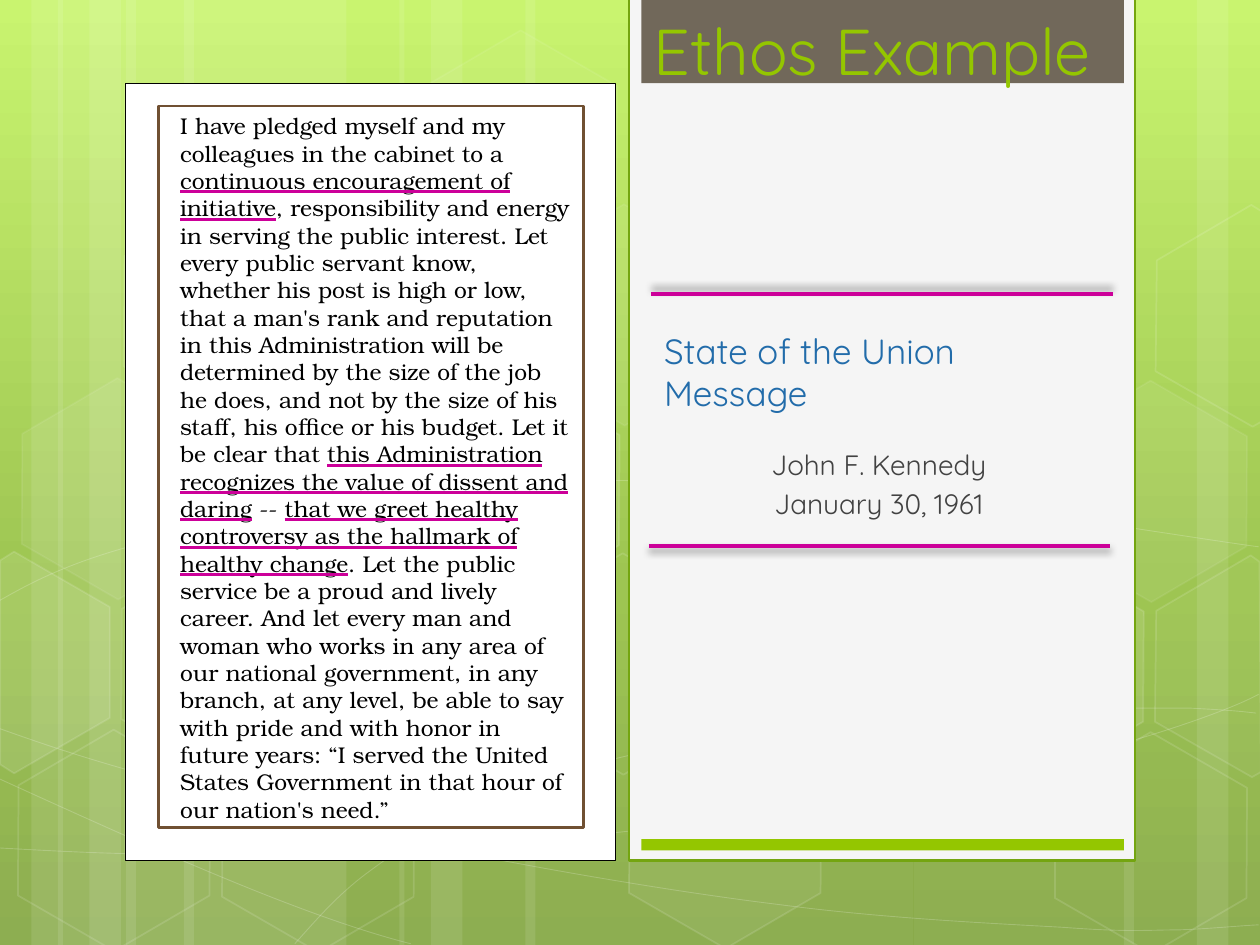
"""Build the Ethos Example slide: a quoted speech beside a caption panel."""
from copy import deepcopy
from math import cos, radians, sin

from lxml.etree import SubElement
from pptx import Presentation
from pptx.dml.color import RGBColor
from pptx.enum.shapes import MSO_CONNECTOR as CXN, MSO_SHAPE as SHAPE
from pptx.enum.text import (MSO_ANCHOR as ANCHOR, MSO_AUTO_SIZE as AUTO,
                            MSO_UNDERLINE as UNDERLINE, PP_ALIGN as ALIGN)
from pptx.oxml.ns import qn
from pptx.util import Inches, Pt

WHITE = RGBColor(0xFF, 0xFF, 0xFF)
BLACK = RGBColor(0, 0, 0)
PANEL = RGBColor(0xF5, 0xF5, 0xF5)
TAUPE = RGBColor(0x71, 0x68, 0x5A)
LIME = RGBColor(0x94, 0xC6, 0x00)
MOSS = RGBColor(0x74, 0xA5, 0x10)
BROWN = RGBColor(0x70, 0x50, 0x32)
BLUE = RGBColor(0x22, 0x6C, 0xAA)
GREY = RGBColor(0x42, 0x42, 0x42)
MAGENTA = RGBColor(0xCC, 0x00, 0x99)
SKY = [(0, RGBColor(0xC3, 0xF3, 0x5F)), (0.62, RGBColor(0x93, 0xBF, 0x3F)),
       (1, RGBColor(0x81, 0xA5, 0x3E))]
SERIF, SANS = "TeX Gyre Bonum", "Quicksand"
TILT = 30

prs = Presentation()
prs.slide_width, prs.slide_height = Inches(10), Inches(7.5)
COL, ROW = prs.slide_width / 10, prs.slide_height / 7.5
s = prs.slides.add_slide(prs.slide_layouts[7])


def grid(*values):
    return [round(v * (ROW if i % 2 else COL)) for i, v in enumerate(values)]


def paint(sp, fill=None, line=None, width=1, fill_alpha=100, line_alpha=100):
    sp.shadow.inherit = False
    for part, color, alpha in ((sp.fill, fill, fill_alpha), (sp.line.fill, line, line_alpha)):
        if color is None:
            part.background()
            continue
        part.solid()
        part.fore_color.rgb = color
        if alpha < 100:
            holder = sp._element.spPr if part is sp.fill else sp.line._ln
            clr = holder.find(qn("a:solidFill")).find(qn("a:srgbClr"))
            SubElement(clr, qn("a:alpha"), val=str(alpha * 1000))
    if line is not None:
        sp.line.width = Pt(width)


bg = s.background.fill
bg.gradient()
bg.gradient_angle = 270
stops = s._element.find(".//" + qn("a:gsLst"))
stops.append(deepcopy(stops[-1]))
for stop, (position, color) in zip(bg.gradient_stops, SKY):
    stop.position, stop.color.rgb = position, color

BARS = [(1, 1.75), (0, 0.5), (0.25, 0.83), (1.46, 1.75), (0.46, 0.5), (0.71, 0.83),
        (7.25, 1.75), (9.5, 0.5), (8.92, 0.83), (4.17, 3.08), (3.17, 0.5), (3.42, 0.83)]
for x, w in BARS:
    paint(s.shapes.add_shape(SHAPE.RECTANGLE, *grid(x, 0, w, 7.5)), WHITE, fill_alpha=10)

CURVES = [
    [(-0.01, 6.73), (0.53, 6.76), (1.07, 6.79), (1.82, 6.78), (2.57, 6.77), (3.49, 6.75),
     (4.49, 6.65), (5.5, 6.55), (6.92, 6.36), (7.83, 6.17), (8.75, 5.98), (9.68, 5.68),
     (9.99, 5.51)],
    [(-0.01, 4.77), (0.27, 4.61), (0.56, 4.46), (1.13, 4.31), (1.7, 4.16), (2.5, 3.94),
     (3.39, 3.87), (4.28, 3.8), (5.35, 3.79), (6.45, 3.87), (7.55, 3.95), (9.39, 4.26),
     (9.99, 4.34)],
    [(-0.03, 6.17), (1.18, 6.72), (2.39, 7.27), (3.26, 7.49)],
    [(-0.01, 5.78), (0.3, 5.89), (0.61, 6), (1.19, 6.16), (1.78, 6.31), (2.65, 6.56),
     (3.48, 6.73), (4.31, 6.9), (5.37, 7.08), (6.19, 7.18), (7.02, 7.29), (7.91, 7.33),
     (8.44, 7.36), (8.97, 7.4), (9.11, 7.38), (9.36, 7.38), (9.62, 7.37), (9.8, 7.35),
     (9.99, 7.34)],
    [(2.34, 7.49), (2.52, 7.29), (2.69, 7.09), (2.94, 6.91), (3.18, 6.73), (3.51, 6.53),
     (3.79, 6.39), (4.07, 6.25), (4.24, 6.19), (4.61, 6.09), (4.98, 5.99), (5.65, 5.85),
     (6, 5.78), (6.35, 5.71), (6.4, 5.71), (6.71, 5.69), (7.02, 5.66), (7.51, 5.63),
     (7.86, 5.62), (8.2, 5.61), (8.78, 5.62), (8.78, 5.62), *[(9.44, 5.62)] * 3,
     (9.63, 5.63), (9.79, 5.64), (9.88, 5.65), (9.97, 5.66), (9.94, 5.65), (9.97, 5.66)],
]
for curve in CURVES:
    fb = s.shapes.build_freeform(*grid(*curve[0]))
    fb.add_line_segments([grid(*p) for p in curve[1:]], close=False)
    sp = fb.convert_to_shape()
    paint(sp, line=WHITE, width=0.5, line_alpha=20)
    segments = list(sp._element.iter(qn("a:lnTo")))
    for i in range(0, len(segments), 3):
        first, second, third = segments[i:i + 3]
        if curve[i + 1] != curve[i + 3]:
            first.tag = qn("a:cubicBezTo")
            first.extend([second[0], third[0]])
        for spare in (second, third):
            spare.getparent().remove(spare)

HEXAGONS = [(3.28, 3.13, 10, 12), (4.07, 4.51, 0, 12), (4.08, 1.74, 7, 8), (3.26, 0.36, 4, 8),
            (4.88, 5.89, 6, 12), (0.03, 5.91, 0, 12), (0.06, 3.12, 7, 8), (0.85, 4.51, 0, 12),
            (1.65, 5.92, 0, 12), (0.87, 1.71, 0, 12), (7.44, 4.53, 10, 12),
            (8.26, 5.93, 0, 12), (8.26, 3.14, 7, 8)]
for x, y, fill_alpha, line_alpha in HEXAGONS:
    sp = s.shapes.add_shape(SHAPE.HEXAGON, *grid(x, y, 1.75, 1.52))
    sp.adjustments[0] = 0.285
    sp.rotation = TILT
    paint(sp, WHITE if fill_alpha else None, WHITE, 1, fill_alpha, line_alpha)

CUT_HEXAGONS = [
    (10, (0.27, 5.35),
     [(0, 4.45), (0.11, 4.38), (0.87, 4.82), (0.87, 5.7), (0.11, 6.14), (0, 6.07)]),
    (4, (9.76, 5.2),
     [(9.18, 4.85), (9.93, 4.41), (10, 4.46), (10.01, 6.13), (9.94, 6.17), (9.17, 5.73)]),
    (0, (9.76, 2.41),
     [(9.18, 2.07), (9.93, 1.63), (10.01, 1.68), (10.01, 3.35), (9.94, 3.39), (9.17, 2.95)]),
]
c, d = cos(radians(TILT)), sin(radians(TILT))
for fill_alpha, (cx, cy), corners in CUT_HEXAGONS:
    level = [grid(cx + (x - cx) * c + (y - cy) * d, cy + (y - cy) * c - (x - cx) * d)
             for x, y in corners]
    fb = s.shapes.build_freeform(*level[0])
    fb.add_line_segments(level[1:])
    sp = fb.convert_to_shape()
    sp.rotation = TILT
    paint(sp, WHITE if fill_alpha else None, WHITE, 1, fill_alpha, 12)

PANELS = [((4.99, -0.02, 4.02, 6.85), PANEL, MOSS, 1.25),
          ((5.09, -0.02, 3.83, 0.68), TAUPE, None, 0),
          ((0.99, 0.66, 3.89, 6.17), WHITE, BLACK, 0.25),
          ((5.09, 6.66, 3.83, 0.09), LIME, None, 0)]
for at, fill, line, width in PANELS:
    paint(s.shapes.add_shape(SHAPE.RECTANGLE, *grid(*at)), fill, line, width)

SPEECH = [
    ("I have pledged myself and my colleagues in the cabinet to a ", False),
    ("continuous encouragement of initiative", True),
    (", responsibility and energy in serving the public interest. Let every public servant "
     "know, whether his post is high or low, that a man's rank and reputation in this "
     "Administration will be determined by the size of the job he does, and not by the size "
     "of his staff, his office or his budget. Let it be clear that ", False),
    ("this Administration recognizes the value of dissent and daring", True),
    (" -- ", False),
    ("that we greet healthy controversy as the hallmark of healthy change", True),
    (". Let the public service be a proud and lively career. And let every man and woman who "
     "works in any area of our national government, in any branch, at any level, be able to "
     "say with pride and with honor in future years: “I served the United States Government "
     "in that hour of our nation's need.”", False),
]
title, speech, caption = (s.placeholders[i] for i in (0, 1, 2))
heading = s.shapes.add_textbox(*grid(5.09, 0, 3.83, 0.75))
TEXTS = [
    (speech, (1.26, 0.84, 3.37, 5.73), ANCHOR.TOP, ALIGN.LEFT, SERIF, 13, BLACK, [SPEECH]),
    (title, (5.17, 2, 3.61, 1.33), ANCHOR.BOTTOM, ALIGN.LEFT, SANS, 20, BLUE,
     [[("State of the Union Message", False)]]),
    (caption, (5.17, 3.5, 3.61, 1.66), ANCHOR.TOP, ALIGN.CENTER, SANS, 16, GREY,
     [[("John F. Kennedy", False)], [("January 30, 1961", False)]]),
    (heading, (5.09, 0, 3.83, 0.75), ANCHOR.BOTTOM, ALIGN.LEFT, SANS, 37, LIME,
     [[("Ethos Example", False)]]),
]
for sp, at, anchor, align, font, size, color, paragraphs in TEXTS:
    s.shapes._spTree.append(sp._element)
    sp.left, sp.top, sp.width, sp.height = grid(*at)
    tf = sp.text_frame
    tf.word_wrap, tf.auto_size, tf.vertical_anchor = True, AUTO.NONE, anchor
    for i, runs in enumerate(paragraphs):
        p = tf.add_paragraph() if i else tf.paragraphs[0]
        p.alignment = align
        for text, underlined in runs:
            r = p.add_run()
            r.text = text
            r.font.name, r.font.size, r.font.bold = font, Pt(size), False
            r.font.color.rgb = color
            if underlined:
                r.font.underline = UNDERLINE.HEAVY_LINE
                rPr = r.font._element
                u_fill = SubElement(rPr, qn("a:uFill"))
                u_fill.append(deepcopy(rPr.find(qn("a:solidFill"))))
                u_fill[0][0].set("val", str(MAGENTA))
                rPr.find(qn("a:latin")).addprevious(u_fill)

speech.line.color.rgb, speech.line.width = BROWN, Pt(1.5)
pPr = speech.text_frame.paragraphs[0]._p.get_or_add_pPr()
pPr.set("marL", str(Inches(0.07)))
pPr.set("indent", "0")
SubElement(pPr, qn("a:buNone"))

for x, y, angle in ((5.17, 2.33, 270), (5.15, 4.33, 90)):
    rule = s.shapes.add_connector(CXN.STRAIGHT, *grid(x, y, x + 3.66, y))
    rule.line.color.rgb, rule.line.width = MAGENTA, Pt(2.25)
    effects = SubElement(rule._element.spPr, qn("a:effectLst"))
    shadow = SubElement(effects, qn("a:outerShdw"), blurRad=str(Pt(4)), dist=str(Pt(3)),
                        dir=str(angle * 60000), algn="ctr", rotWithShape="0")
    SubElement(SubElement(shadow, qn("a:srgbClr"), val=str(BLACK)), qn("a:alpha"), val="40000")

prs.save("out.pptx")
